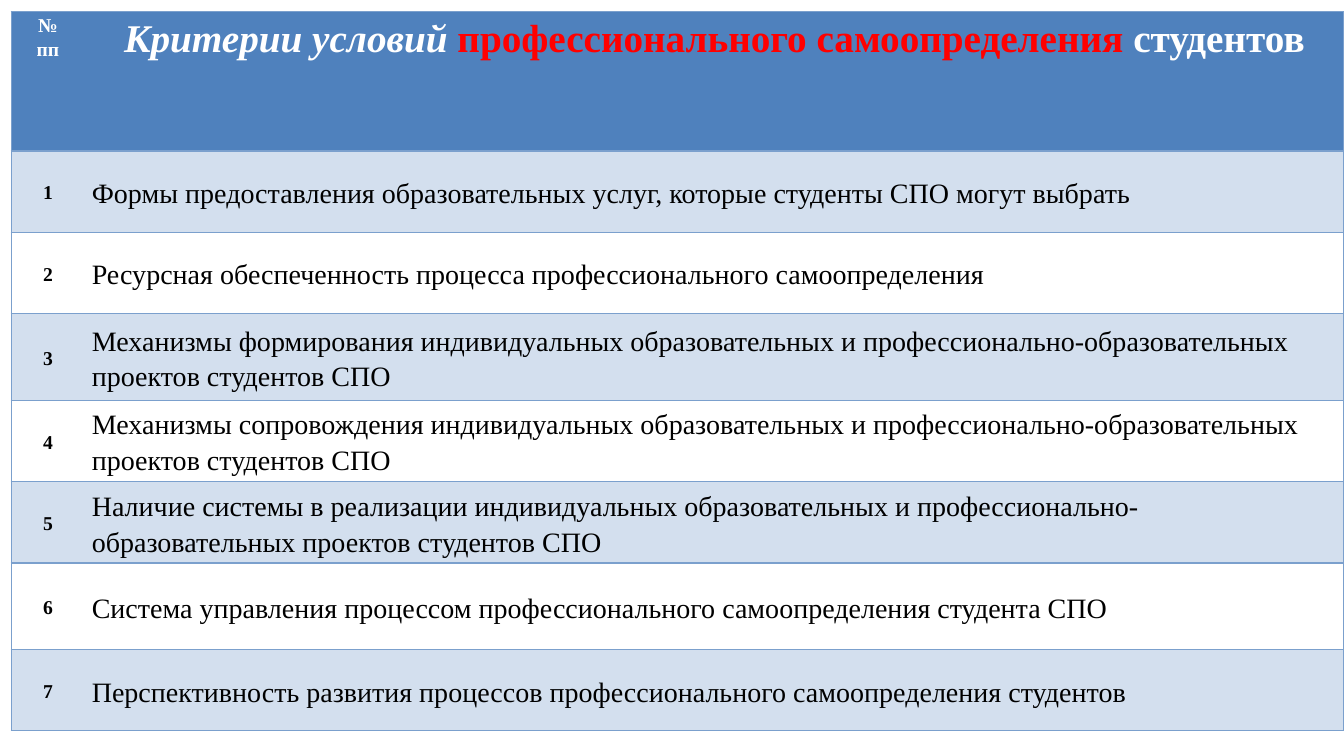
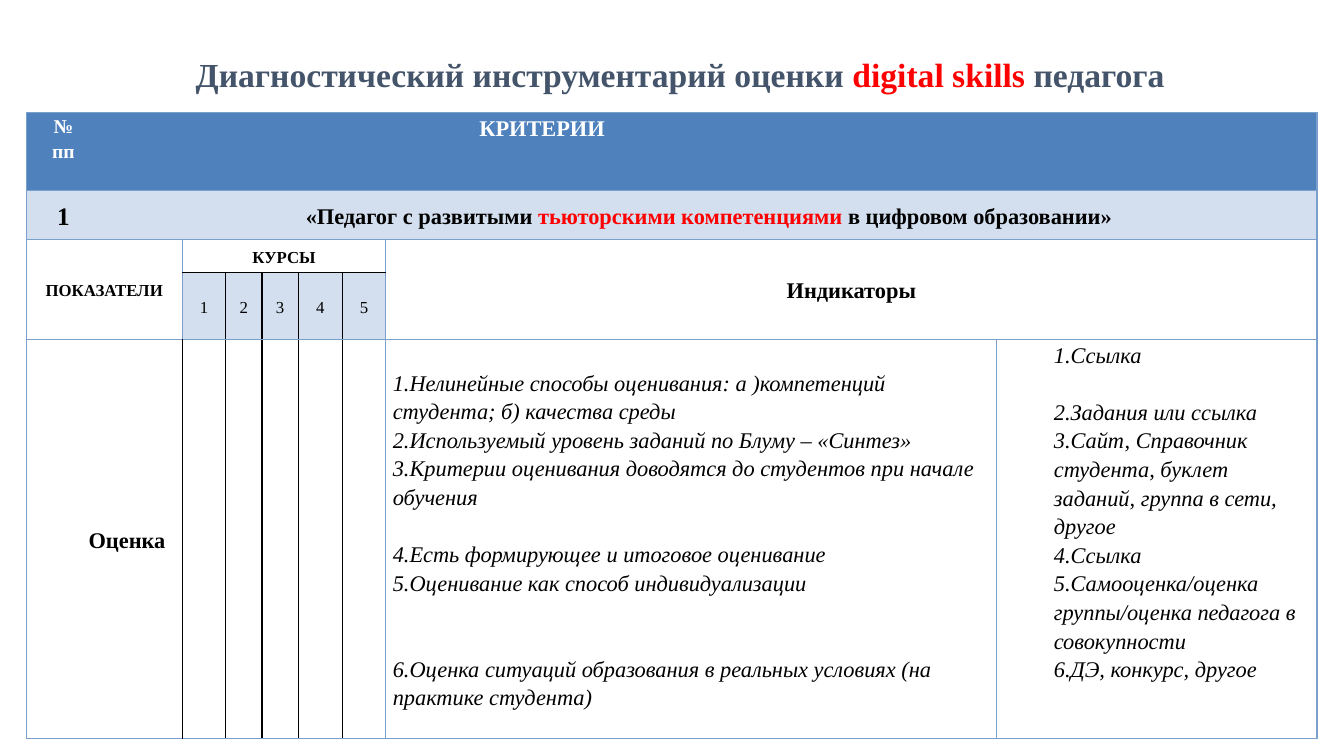
from itertools import product

from lxml import etree
from pptx import Presentation
from pptx import util as u
from pptx.dml.color import RGBColor
from pptx.enum import text
from pptx.oxml import ns

WIDTH, HEIGHT = u.Inches(13.33), u.Inches(7.5)
FONT = "Times New Roman"
HEADER, BAND, WHITE = "4F81BD", "D3DFEE", "FFFFFF"
BLACK, RED, SLATE = "000000", "FF0000", "44546A"
EDGES = {"b": "7BA0CD", "k": BLACK}
LEFT_CELL, MIDDLE_CELL, RIGHT_CELL, CLOSED_CELL = "bb-b", "-b-b", "-bbb", "bbbb"
CENTER, LEFT = text.PP_ALIGN.CENTER, text.PP_ALIGN.LEFT
TOP, MIDDLE = text.MSO_ANCHOR.TOP, text.MSO_ANCHOR.MIDDLE
LINE_GAP = 20.4

CRITERIA = [
    "Формы предоставления образовательных услуг, которые студенты СПО могут выбрать",
    "Ресурсная обеспеченность процесса профессионального самоопределения",
    "Механизмы формирования индивидуальных образовательных и профессионально-образовательных проектов студентов СПО",
    "Механизмы сопровождения индивидуальных образовательных и профессионально-образовательных проектов студентов СПО",
    "Наличие системы в реализации индивидуальных образовательных и профессионально-образовательных проектов студентов СПО",
    "Система управления процессом профессионального самоопределения студента СПО",
    "Перспективность развития процессов профессионального самоопределения студентов",
]
INDICATORS = [
    "1.Нелинейные способы оценивания: а )компетенций студента; б) качества среды",
    "2.Используемый уровень заданий по Блуму – «Синтез»",
    "3.Критерии оценивания доводятся до студентов при начале обучения",
    "4.Есть формирующее и итоговое оценивание",
    "5.Оценивание как способ индивидуализации",
    "6.Оценка ситуаций образования в реальных условиях (на практике студента)",
]
EVIDENCE = [
    "1.Ссылка",
    "2.Задания или ссылка",
    "3.Сайт, Справочник студента, буклет заданий, группа в сети, другое",
    "4.Ссылка",
    "5.Самооценка/оценка группы/оценка педагога в совокупности",
    "6.ДЭ, конкурс, другое",
]


def rgb(value):
    return RGBColor.from_string(value)


def place(box):
    return [u.Emu(round(side * share / 100))
            for side, share in zip((WIDTH, HEIGHT) * 2, box)]


def write(frame, lines, size, color=BLACK, bold=True, italic=False,
          align=CENTER, gaps=None, indent=0):
    for index, line in enumerate(lines):
        paragraph = frame.paragraphs[0] if index == 0 else frame.add_paragraph()
        paragraph.alignment = align
        paragraph.line_spacing = 1.15
        paragraph.space_before = u.Pt(LINE_GAP * (gaps or {}).get(index, 0))
        if indent:
            paragraph._p.get_or_add_pPr().set("marL", str(u.Inches(indent)))
        parts = [(line, color, italic)] if isinstance(line, str) else line
        for wording, tint, slant in parts:
            run = paragraph.add_run()
            run.text = wording
            font = run.font
            font.name, font.size = FONT, u.Pt(size)
            font.bold, font.italic = bold, slant
            font.color.rgb = rgb(tint)


def draw_edges(cell, edges):
    properties = cell._tc.get_or_add_tcPr()
    left, top, right, bottom = edges
    for side, key in zip("LRTB", (left, right, top, bottom)):
        line = etree.SubElement(properties, ns.qn("a:ln" + side), w=str(u.Pt(1)))
        if key in EDGES:
            fill = etree.SubElement(line, ns.qn("a:solidFill"))
            etree.SubElement(fill, ns.qn("a:srgbClr"), val=EDGES[key])
        else:
            etree.SubElement(line, ns.qn("a:noFill"))


def add_grid(slide, box, columns, rows):
    left, top, width, height = place(box)
    grid = slide.shapes.add_table(len(rows), len(columns), left, top, width, height).table
    grid.first_row = grid.horz_banding = False
    for column, share in zip(grid.columns, columns):
        column.width = u.Emu(round(width * share / sum(columns)))
    for row, share in zip(grid.rows, rows):
        row.height = u.Emu(round(height * share / sum(rows)))
    return grid


def fill_block(grid, row, column, edges, fill=WHITE, span=(1, 1),
               lines=(), size=14, anchor=MIDDLE, **style):
    last_row, last_column = row + span[0] - 1, column + span[1] - 1
    for r, c in product(range(row, last_row + 1), range(column, last_column + 1)):
        cell = grid.cell(r, c)
        origin = (r, c) == (row, column)
        outer = (c == column, r == row, c == last_column, r == last_row)
        draw_edges(cell, [key if origin or shown else "-"
                          for key, shown in zip(edges, outer)])
        cell.fill.solid()
        cell.fill.fore_color.rgb = rgb(fill)
    block = grid.cell(row, column)
    if span != (1, 1):
        block.merge(grid.cell(last_row, last_column))
    block.margin_left = block.margin_right = u.Inches(0.07)
    block.margin_top = block.margin_bottom = 0
    block.vertical_anchor = anchor
    write(block.text_frame, lines, size, **style)


def number_header(grid, span=(1, 1)):
    fill_block(grid, 0, 0, LEFT_CELL, HEADER, span, ["№", "пп"], 14, TOP, color=WHITE)


def criteria_slide(slide, box):
    grid = add_grid(slide, box, [0.73, 12.49],
                    [1.39, 0.81, 0.81, 0.86, 0.81, 0.81, 0.86, 0.81])
    heading = [("Критерии условий ", WHITE, True),
               ("профессионального самоопределения ", RED, False),
               ("студентов", WHITE, False)]
    number_header(grid)
    fill_block(grid, 0, 1, RIGHT_CELL, HEADER, lines=[heading], size=28, anchor=TOP)
    for number, criterion in enumerate(CRITERIA, 1):
        fill = BAND if number % 2 else WHITE
        fill_block(grid, number, 0, LEFT_CELL, fill, lines=[str(number)])
        fill_block(grid, number, 1, RIGHT_CELL, fill, lines=[criterion],
                   size=20, bold=False, align=LEFT)


def slide_title(slide, box, parts):
    frame = slide.shapes.add_textbox(*place(box)).text_frame
    frame.word_wrap = True
    frame.vertical_anchor = MIDDLE
    write(frame, [parts], 24)


def assessment_header(grid):
    number_header(grid, (1, 2))
    fill_block(grid, 0, 2, MIDDLE_CELL, HEADER, (1, 7), ["КРИТЕРИИ"], 16, TOP, color=WHITE)
    fill_block(grid, 0, 9, RIGHT_CELL, HEADER, (1, 2))
    competence = [("«Педагог с развитыми ", BLACK, False),
                  ("тьюторскими компетенциями ", RED, False),
                  ("в цифровом образовании»", BLACK, False)]
    fill_block(grid, 1, 0, LEFT_CELL, BAND, (1, 2), ["1"], 18)
    fill_block(grid, 1, 2, RIGHT_CELL, BAND, (1, 9), [competence], 16)
    fill_block(grid, 2, 0, CLOSED_CELL, WHITE, (2, 3), ["ПОКАЗАТЕЛИ"], 12)
    fill_block(grid, 2, 3, "bbbk", WHITE, (1, 5), ["КУРСЫ"], 12)
    fill_block(grid, 2, 8, CLOSED_CELL, WHITE, (2, 3), ["Индикаторы"], 16)


def assessment_courses(grid):
    for course in range(1, 6):
        left = "b" if course == 1 else "k"
        right = "b" if course == 5 else "k"
        fill_block(grid, 3, course + 2, left + "k" + right + "b", BAND,
                   lines=[str(course)], size=12, bold=False)
        fill_block(grid, 4, course + 2, "kb" + right + "b")


def assessment_details(grid):
    details = dict(size=16, align=LEFT)
    listing = dict(details, bold=False, italic=True)
    fill_block(grid, 4, 0, LEFT_CELL)
    fill_block(grid, 4, 1, "-bkb", span=(1, 2), lines=["Оценка"], **details)
    fill_block(grid, 4, 8, CLOSED_CELL, span=(1, 2), lines=INDICATORS,
               gaps={3: 1, 5: 2}, **listing)
    fill_block(grid, 4, 10, CLOSED_CELL, lines=EVIDENCE, anchor=TOP,
               gaps={1: 1}, indent=0.5, **listing)


def assessment_slide(slide, title_box, box):
    slide_title(slide, title_box, [("Диагностический инструментарий оценки ", SLATE, False),
                                   ("digital skills ", RED, False),
                                   ("педагога", SLATE, False)])
    grid = add_grid(slide, box,
                    [0.55, 0.19, 0.81, 0.43, 0.36, 0.36, 0.44, 0.43, 5.93, 0.13, 3.18],
                    [0.77, 0.49, 0.33, 0.66, 3.96])
    assessment_header(grid)
    assessment_courses(grid)
    assessment_details(grid)


def main():
    deck = Presentation()
    deck.slide_width, deck.slide_height = WIDTH, HEIGHT
    blank = deck.slide_layouts[6]
    criteria_slide(deck.slides.add_slide(blank), (0.83, 1.5, 99.17, 95.2))
    assessment_slide(deck.slides.add_slide(blank), (8, 5.6, 85.2, 7.6), (1.95, 14.9, 96.05, 82.8))
    deck.save("out.pptx")


if __name__ == "__main__":
    main()
